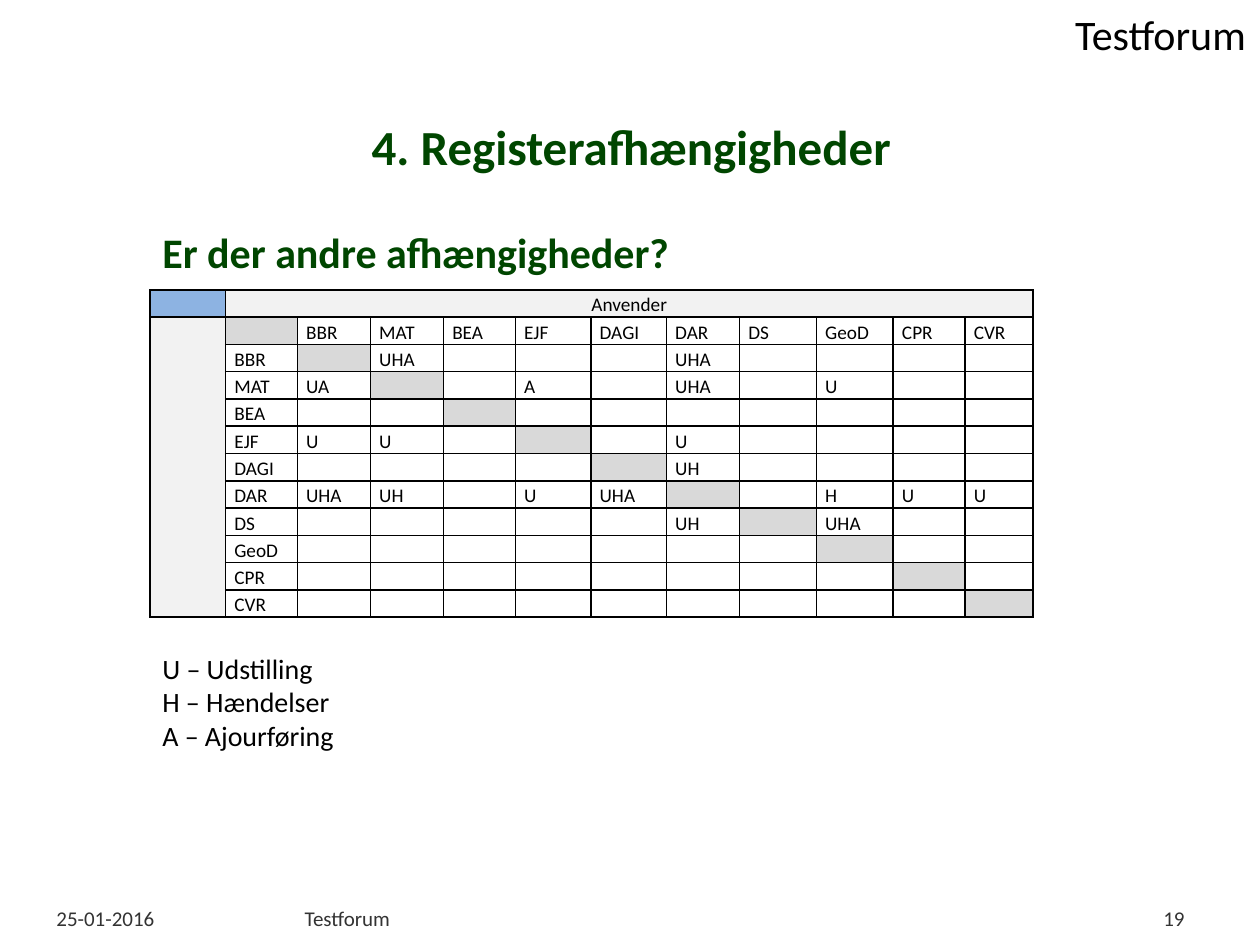
from lxml import etree
from pptx import Presentation
from pptx.dml.color import RGBColor
from pptx.enum.text import MSO_ANCHOR, PP_ALIGN
from pptx.oxml.ns import qn
from pptx.util import Inches, Pt

LEFT, CENTER, RIGHT = PP_ALIGN.LEFT, PP_ALIGN.CENTER, PP_ALIGN.RIGHT
TOP, MIDDLE = MSO_ANCHOR.TOP, MSO_ANCHOR.MIDDLE

BLACK = RGBColor(0x00, 0x00, 0x00)
GREEN = RGBColor(0x00, 0x46, 0x00)
DARK_GREY = RGBColor(0x33, 0x33, 0x33)
BLUE = RGBColor(0x8D, 0xB3, 0xE2)
LIGHT_GREY = RGBColor(0xF2, 0xF2, 0xF2)
GREY = RGBColor(0xD9, 0xD9, 0xD9)

FONT = "Calibri"
CORNER = {"size": Pt(24), "color": BLACK}
TITLE = {"size": Pt(28), "color": GREEN, "bold": True}
SUBTITLE = {"size": Pt(24), "color": GREEN, "bold": True}
LEGEND = {"size": Pt(16), "color": BLACK}
FOOTER = {"size": Pt(12), "color": DARK_GREY}
CELL = {"size": Pt(11), "color": BLACK}

REGISTERS = ["BBR", "MAT", "BEA", "EJF", "DAGI", "DAR", "DS", "GeoD", "CPR", "CVR"]
# Register in the row -> registers that use it, with the kind of dependency
DEPENDENCIES = {
    "BBR": {"MAT": "UHA", "DAR": "UHA"},
    "MAT": {"BBR": "UA", "EJF": "A", "DAR": "UHA", "GeoD": "U"},
    "EJF": {"BBR": "U", "MAT": "U", "DAR": "U"},
    "DAGI": {"DAR": "UH"},
    "DAR": {"BBR": "UHA", "MAT": "UH", "EJF": "U", "DAGI": "UHA",
            "GeoD": "H", "CPR": "U", "CVR": "U"},
    "DS": {"DAR": "UH", "GeoD": "UHA"},
}
COL_WIDTHS = [0.6, 0.57, 0.58, 0.58, 0.57, 0.6, 0.6, 0.58, 0.61, 0.61, 0.57, 0.54]
ROW_HEIGHT = 2.6 / 12


def add_run(p, text, style):
    r = p.add_run()
    r.text = text
    r.font.name = FONT
    for name, value in style.items():
        if name == "color":
            r.font.color.rgb = value
        else:
            setattr(r.font, name, value)


def add_text(slide, box, lines, style, align=LEFT, anchor=TOP, wrap=True):
    sp = slide.shapes.add_textbox(*(Inches(v) for v in box))
    tf = sp.text_frame
    tf.word_wrap = wrap
    tf.vertical_anchor = anchor
    for i, line in enumerate(lines):
        p = tf.add_paragraph() if i else tf.paragraphs[0]
        p.alignment = align
        add_run(p, line, style)


def add_borders(cell):
    tc_pr = cell._tc.get_or_add_tcPr()
    for side in ("a:lnL", "a:lnR", "a:lnT", "a:lnB"):
        ln = etree.SubElement(tc_pr, qn(side), w=str(Pt(1)))
        fill = etree.SubElement(ln, qn("a:solidFill"))
        etree.SubElement(fill, qn("a:srgbClr"), val=str(BLACK))


def format_cell(cell, text="", fill=None, align=LEFT):
    margins = {"margin_left": 0.07, "margin_right": 0.07,
               "margin_top": 0, "margin_bottom": 0}
    for name, value in margins.items():
        setattr(cell, name, Inches(value))
    add_borders(cell)
    if fill is None:
        cell.fill.background()
    else:
        cell.fill.solid()
        cell.fill.fore_color.rgb = fill
    p = cell.text_frame.paragraphs[0]
    p.alignment = align
    p.line_spacing = 1.15
    if text:
        add_run(p, text, CELL)
    else:
        # Keeps empty rows as low as the others
        etree.SubElement(p._p, qn("a:endParaRPr"), sz="1100")


def add_matrix(slide):
    n = len(REGISTERS) + 2
    frame = slide.shapes.add_table(n, n, Inches(1.19), Inches(2.3),
                                   Inches(sum(COL_WIDTHS)), Inches(ROW_HEIGHT * n))
    table = frame.table
    table.first_row = table.horz_banding = False
    for column, width in zip(table.columns, COL_WIDTHS):
        column.width = Inches(width)
    for row in table.rows:
        row.height = Inches(ROW_HEIGHT)

    # Top band and left band
    table.cell(0, 1).merge(table.cell(0, n - 1))
    table.cell(1, 0).merge(table.cell(n - 1, 0))
    format_cell(table.cell(0, 0), fill=BLUE)
    for i in range(1, n):
        format_cell(table.cell(0, i), "Anvender" if i == 1 else "", LIGHT_GREY, CENTER)
        format_cell(table.cell(i, 0), fill=LIGHT_GREY)

    # Register names, grey diagonal and dependencies
    format_cell(table.cell(1, 1), fill=GREY)
    for i, source in enumerate(REGISTERS, 2):
        format_cell(table.cell(1, i), source)
        format_cell(table.cell(i, 1), source)
        uses = DEPENDENCIES.get(source, {})
        for j, user in enumerate(REGISTERS, 2):
            format_cell(table.cell(i, j), uses.get(user, ""), GREY if i == j else None)


def main():
    prs = Presentation()
    prs.slide_width, prs.slide_height = Inches(10), Inches(7.5)
    slide = prs.slides.add_slide(prs.slide_layouts[6])

    # Headings
    add_text(slide, (8.42, 0.02, 1.58, 0.5), ["Testforum"], CORNER, CENTER, wrap=False)
    add_text(slide, (0.51, 0.84, 9, 0.63), ["4. Registerafhængigheder"],
             TITLE, CENTER, MIDDLE)

    # Footer
    add_text(slide, (0.35, 7.14, 2.37, 0.16), ["25-01-2016"], FOOTER)
    add_text(slide, (2.32, 7.14, 6.22, 0.16), ["Testforum"], FOOTER)
    add_text(slide, (8.78, 7.14, 0.72, 0.16), ["19"], FOOTER, RIGHT)

    # Matrix with its legend and question
    add_matrix(slide)
    add_text(slide, (1.19, 5.12, 5, 0.91),
             ["U – Udstilling", "H – Hændelser", "A – Ajourføring"], LEGEND)
    add_text(slide, (1.19, 1.68, 9, 0.63), ["Er der andre afhængigheder?"],
             SUBTITLE, anchor=MIDDLE)

    prs.save("out.pptx")


if __name__ == "__main__":
    main()
